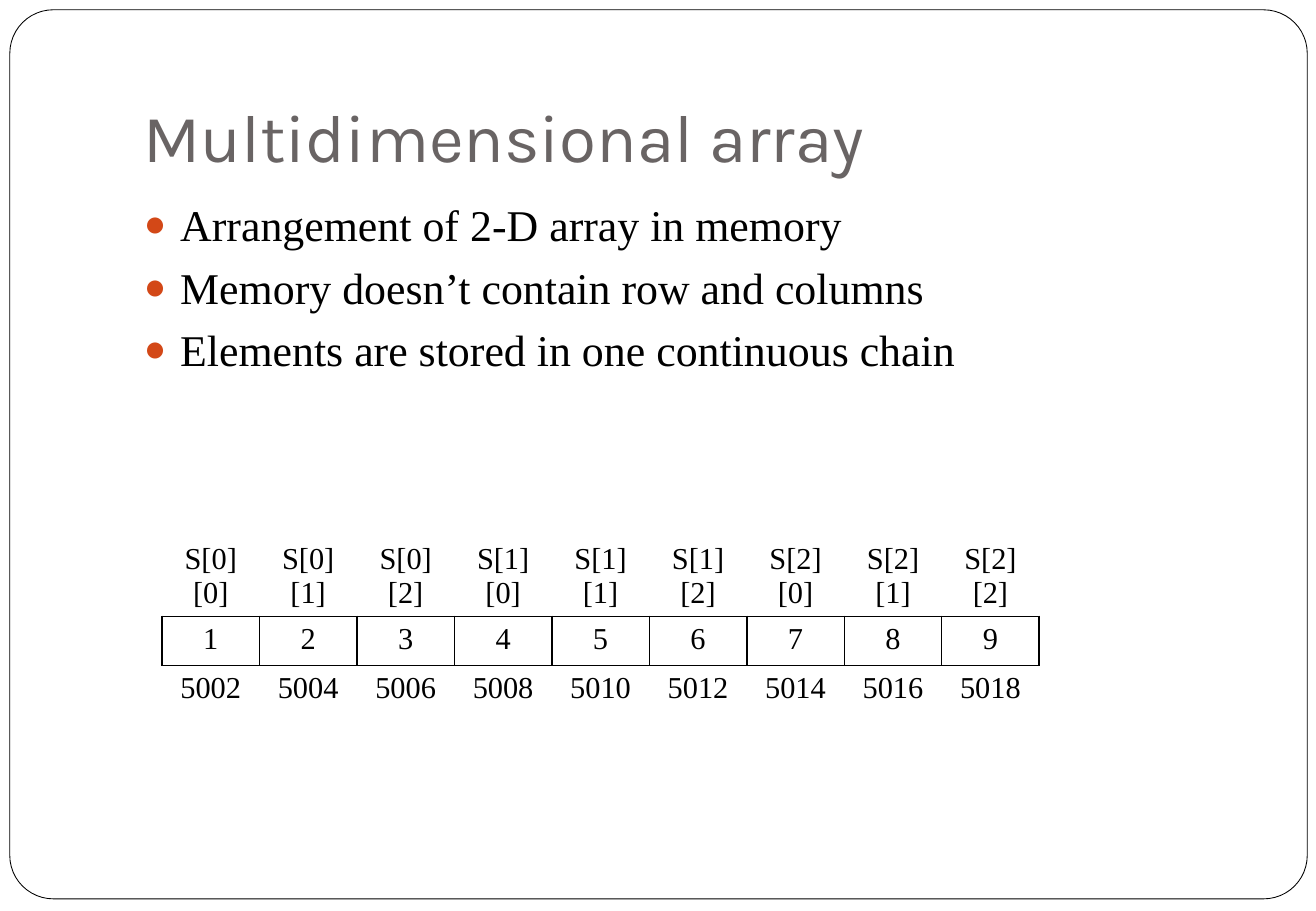
from dataclasses import dataclass

from lxml import etree
from pptx import Presentation
from pptx.dml.color import RGBColor
from pptx.enum.shapes import MSO_SHAPE
from pptx.enum.text import MSO_ANCHOR, MSO_AUTO_SIZE, PP_ALIGN
from pptx.oxml.ns import qn
from pptx.util import Pt

LEFT, CENTER = PP_ALIGN.LEFT, PP_ALIGN.CENTER
TOP, BOTTOM = MSO_ANCHOR.TOP, MSO_ANCHOR.BOTTOM
ROUNDED = MSO_SHAPE.ROUNDED_RECTANGLE
NO_AUTOFIT = MSO_AUTO_SIZE.NONE


@dataclass(frozen=True)
class Theme:
    heading_font: str = "Karla"
    body_font: str = "Times New Roman"
    ink: str = "000000"
    paper: str = "FFFFFF"
    heading: str = "696464"
    accent: str = "D34817"
    title_size: int = 40
    list_size: int = 26
    cell_size: int = 18


THEME = Theme()
POINTS = [
    "Arrangement of 2-D array in memory",
    "Memory doesn’t contain row and columns",
    "Elements are stored in one continuous chain",
]
ARRAY_SIDE = 3
FIRST_ADDRESS, ELEMENT_BYTES = 5002, 2


def write_text(paragraph, text, font=THEME.body_font, size=THEME.cell_size,
               color=THEME.ink, align=LEFT, before=0):
    paragraph.alignment = align
    paragraph.space_before = Pt(before)
    run = paragraph.add_run()
    run.text = text
    run.font.name = font
    run.font.size = Pt(size)
    run.font.color.rgb = RGBColor.from_string(color)


def add_bullet(paragraph, indent):
    properties = paragraph._p.get_or_add_pPr()
    properties.set("marL", str(Pt(indent)))
    properties.set("indent", str(Pt(-indent)))
    color = etree.SubElement(properties, qn("a:buClr"))
    etree.SubElement(color, qn("a:srgbClr"), val=THEME.accent)
    etree.SubElement(properties, qn("a:buSzPct"), val="85000")
    etree.SubElement(properties, qn("a:buFont"), typeface=THEME.body_font)
    etree.SubElement(properties, qn("a:buChar"), char="●")


def place(placeholder, left, top, width, height, anchor, bottom_inset):
    placeholder.left, placeholder.top = Pt(left), Pt(top)
    placeholder.width, placeholder.height = Pt(width), Pt(height)
    frame = placeholder.text_frame
    frame.auto_size = NO_AUTOFIT
    frame.word_wrap = True
    frame.vertical_anchor = anchor
    frame.margin_left = frame.margin_right = Pt(7.2)
    frame.margin_top, frame.margin_bottom = Pt(3.6), Pt(bottom_inset)
    return frame


def add_frame(slide):
    border = slide.shapes.add_shape(ROUNDED, Pt(5.8), Pt(5.8), Pt(769), Pt(527))
    border.adjustments[0] = 0.049
    border.shadow.inherit = False
    border.fill.solid()
    border.fill.fore_color.rgb = RGBColor.from_string(THEME.paper)
    border.line.color.rgb = RGBColor.from_string(THEME.ink)
    border.line.width = Pt(0.5)
    # Behind the placeholders
    slide.shapes._spTree.insert(2, border._element)


def add_title(slide):
    frame = place(slide.shapes.title, 78, 21.6, 663, 90, BOTTOM, 7.2)
    write_text(frame.paragraphs[0], "Multidimensional array",
               font=THEME.heading_font, size=THEME.title_size,
               color=THEME.heading)


def add_points(slide):
    frame = place(slide.placeholders[1], 78, 113.8, 663, 360, TOP, 3.6)
    for index, point in enumerate(POINTS):
        paragraph = frame.add_paragraph() if index else frame.paragraphs[0]
        write_text(paragraph, point, size=THEME.list_size, before=5.8)
        add_bullet(paragraph, 21.6)


def set_borders(cell, drawn_sides):
    properties = cell._tc.get_or_add_tcPr()
    for side in "LRTB":
        line = etree.SubElement(properties, qn(f"a:ln{side}"), w=str(Pt(1)))
        if side in drawn_sides:
            fill = etree.SubElement(line, qn("a:solidFill"))
            etree.SubElement(fill, qn("a:srgbClr"), val=THEME.ink)
        else:
            etree.SubElement(line, qn("a:noFill"))


def add_memory_table(slide):
    count = ARRAY_SIDE ** 2
    # Each row: its texts and the cell sides that are ruled
    rows = [
        ([f"S[{i // ARRAY_SIDE}][{i % ARRAY_SIDE}]" for i in range(count)], "B"),
        ([str(i + 1) for i in range(count)], "LRTB"),
        ([str(FIRST_ADDRESS + ELEMENT_BYTES * i) for i in range(count)], "T"),
    ]
    memory = slide.shapes.add_table(len(rows), count, Pt(96), Pt(318.2),
                                    Pt(520), Pt(87.6)).table
    memory.first_row = memory.horz_banding = False
    for column in memory.columns:
        column.width = Pt(57.78)
    for r, (texts, sides) in enumerate(rows):
        memory.rows[r].height = Pt(29.2)
        for c, text in enumerate(texts):
            cell = memory.cell(r, c)
            set_borders(cell, sides)
            cell.fill.background()
            write_text(cell.text_frame.paragraphs[0], text, align=CENTER)


def main():
    deck = Presentation()
    deck.slide_width, deck.slide_height = Pt(780), Pt(540)
    slide = deck.slides.add_slide(deck.slide_layouts[1])
    add_frame(slide)
    add_title(slide)
    add_points(slide)
    add_memory_table(slide)
    deck.save("out.pptx")


if __name__ == "__main__":
    main()
